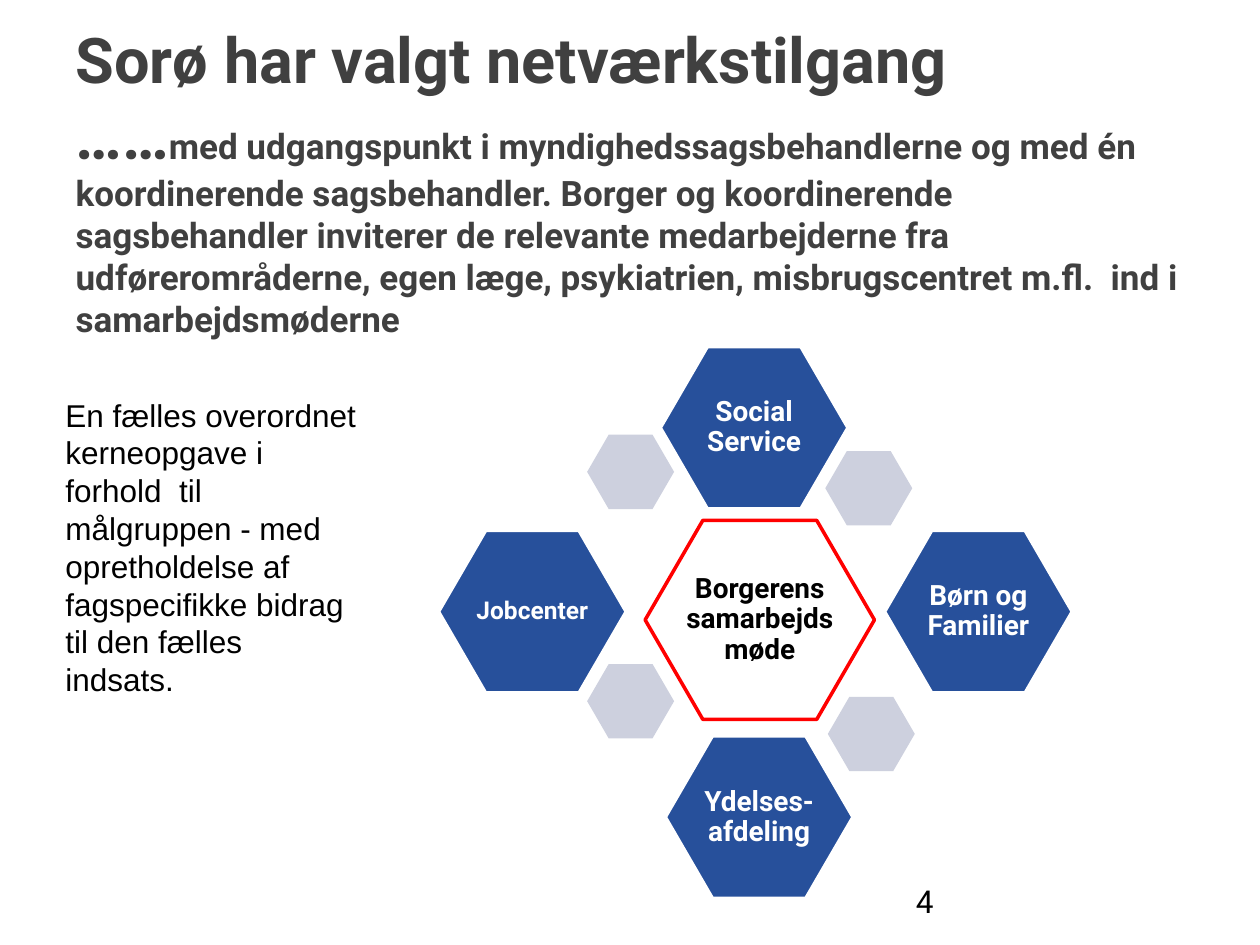
import pptx
import pptx.dml.color
import pptx.enum.shapes
import pptx.enum.text
import pptx.util

Inches, Pt = pptx.util.Inches, pptx.util.Pt
ALIGN = pptx.enum.text.PP_ALIGN
ANCHOR = pptx.enum.text.MSO_ANCHOR

COLORS = {"title": "404040", "text": "000000", "white": "FFFFFF",
          "blue": "27509B", "pale": "CDD0DE", "red": "FF0000"}

HEADING = "Sorø har valgt netværkstilgang"
DOTS = "……"
LEAD = ("med udgangspunkt i myndighedssagsbehandlerne og med én koordinerende "
        "sagsbehandler. Borger og koordinerende sagsbehandler inviterer de relevante "
        "medarbejderne fra udførerområderne, egen læge, psykiatrien, "
        "misbrugscentret m.fl.  ind i samarbejdsmøderne")
SIDE_NOTE = ("En fælles overordnet kerneopgave i forhold  til målgruppen - med "
             "opretholdelse af fagspecifikke bidrag til den fælles indsats.")
PAGE_NUMBER = "4"

CENTER = ("Borgerens samarbejdsmøde", 5.12, 4.13)
PARTNERS = [  # text, left, top, text size
    ("Jobcenter", 3.48, 4.21, 14),
    ("Social Service", 5.24, 2.75, 16),
    ("Børn og Familier", 7.02, 4.21, 16),
    ("Ydelses-afdeling", 5.28, 5.84, 16),
]
ACCENTS = [(6.55, 3.58), (7.06, 4.48), (6.57, 5.53), (4.66, 3.45), (4.66, 5.27)]
CENTER_SIZE, PARTNER_SIZE, ACCENT_SIZE = (1.82, 1.58), (1.49, 1.29), (0.69, 0.59)


def rgb(name):
    return pptx.dml.color.RGBColor.from_string(COLORS[name])


def add_text(p, text, size=18, font="Roboto", color="text", bold=False):
    r = p.add_run()
    r.text = text
    r.font.size, r.font.name, r.font.bold = Pt(size), font, bold
    r.font.color.rgb = rgb(color)


def add_box(shapes, left, top, width, height, text, **fmt):
    sp = shapes.add_textbox(*map(Inches, (left, top, width, height)))
    sp.text_frame.word_wrap = True
    add_text(sp.text_frame.paragraphs[0], text, **fmt)


def add_hexagon(shapes, left, top, extent, fill=None, line=None, text="", **fmt):
    sp = shapes.add_shape(pptx.enum.shapes.MSO_SHAPE.HEXAGON,
                          *map(Inches, (left, top, *extent)))
    sp.shadow.inherit = False
    sp.adjustments[0] = 0.29
    if fill:
        sp.fill.solid()
        sp.fill.fore_color.rgb = rgb(fill)
    else:
        sp.fill.background()
    if line:
        sp.line.color.rgb = rgb(line)
        sp.line.width = Pt(2)
    else:
        sp.line.fill.background()
    if text:
        tf = sp.text_frame
        tf.word_wrap = True
        tf.vertical_anchor = ANCHOR.MIDDLE
        tf.margin_left = tf.margin_right = tf.margin_top = tf.margin_bottom = Inches(0.02)
        p = tf.paragraphs[0]
        p.alignment, p.line_spacing = ALIGN.CENTER, 0.9
        add_text(p, text, bold=True, **fmt)


def add_title(title):
    title.left, title.top, title.width, title.height = map(Inches, (0.5, 0.66, 9, 1.54))
    tf = title.text_frame
    tf.word_wrap = True
    tf.auto_size = pptx.enum.text.MSO_AUTO_SIZE.NONE
    tf.vertical_anchor = ANCHOR.MIDDLE
    p = tf.paragraphs[0]
    p.alignment = ALIGN.LEFT
    add_text(p, HEADING, size=36, color="title", bold=True)
    p.add_line_break()
    add_text(p, DOTS, size=36, color="title", bold=True)
    add_text(p, LEAD, size=20, color="title", bold=True)


def main():
    prs = pptx.Presentation()
    prs.slide_width, prs.slide_height = Inches(10), Inches(7.5)
    s = prs.slides.add_slide(prs.slide_layouts[5])

    add_title(s.shapes.title)
    add_box(s.shapes, 7.17, 6.95, 2.33, 0.4, PAGE_NUMBER)

    text, left, top = CENTER
    add_hexagon(s.shapes, left, top, CENTER_SIZE, line="red", text=text, size=16)
    for left, top in ACCENTS:
        add_hexagon(s.shapes, left, top, ACCENT_SIZE, fill="pale")
    for text, left, top, pt in PARTNERS:
        add_hexagon(s.shapes, left, top, PARTNER_SIZE, fill="blue", line="white",
                    text=text, size=pt, color="white")

    add_box(s.shapes, 0.42, 3.09, 2.52, 1.92, SIDE_NOTE, font="Arial")
    prs.save("out.pptx")


if __name__ == "__main__":
    main()
